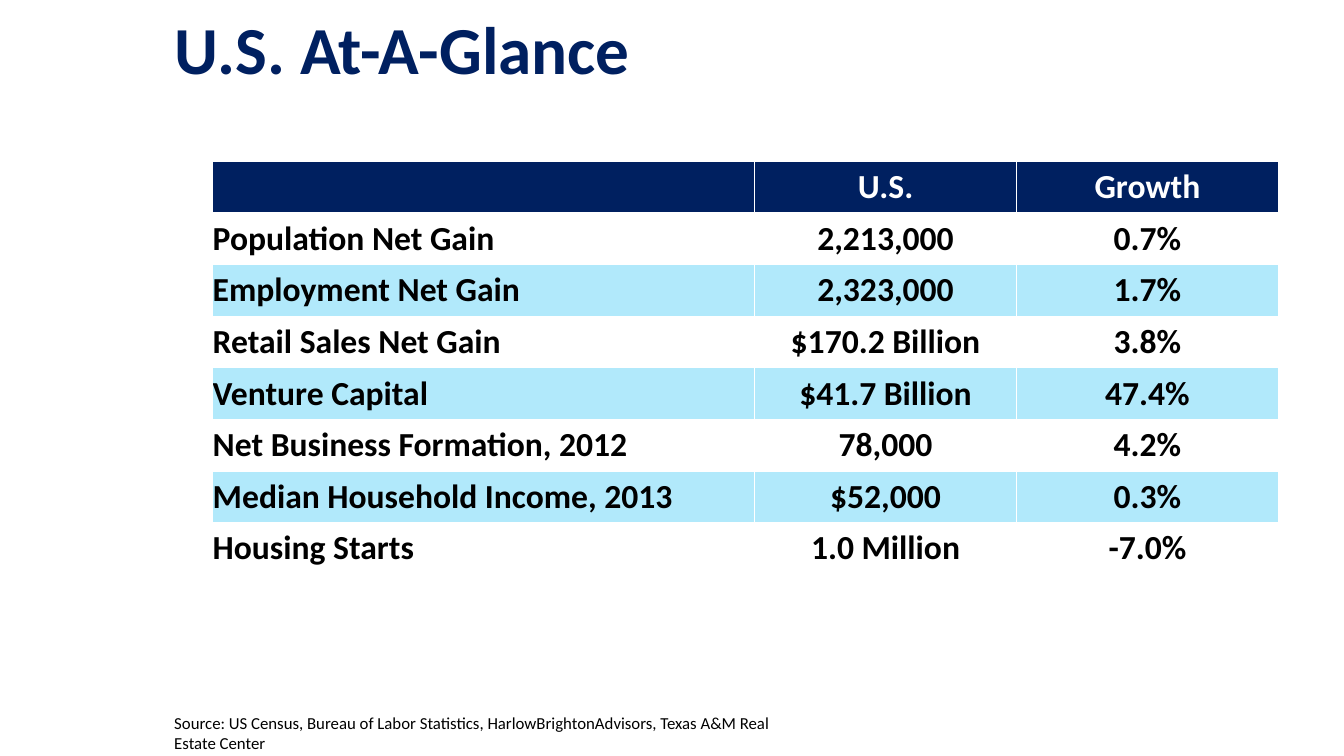
from pptx import Presentation
from pptx.dml.color import RGBColor
from pptx.enum.text import MSO_ANCHOR, PP_ALIGN
from pptx.util import Inches, Pt

LEFT = PP_ALIGN.LEFT
CENTER = PP_ALIGN.CENTER
MIDDLE = MSO_ANCHOR.MIDDLE
TITLE_ONLY = 5

NAVY = "002060"
WHITE = "FFFFFF"
BLACK = "000000"
LIGHT_BLUE = "B1E9FB"

TITLE_FORMAT = {"name": "Calibri", "size": Pt(48), "bold": True}
TABLE_FORMAT = {"name": "Calibri", "size": Pt(24), "bold": True}
SOURCE_FORMAT = {"name": "Calibri", "size": Pt(12), "bold": False}

COLUMN_WIDTHS = [5.38, 2.6, 2.6]
INDICATORS = [
    ("", "U.S.", "Growth"),
    ("Population Net Gain", "2,213,000", "0.7%"),
    ("Employment Net Gain", "2,323,000", "1.7%"),
    ("Retail Sales Net Gain", "$170.2 Billion", "3.8%"),
    ("Venture Capital", "$41.7 Billion", "47.4%"),
    ("Net Business Formation, 2012", "78,000", "4.2%"),
    ("Median Household Income, 2013", "$52,000", "0.3%"),
    ("Housing Starts", "1.0 Million", "-7.0%"),
]
SOURCE = (
    "Source: US Census, Bureau of Labor Statistics, HarlowBrightonAdvisors, "
    "Texas A&M Real Estate Center"
)


def color(value):
    return RGBColor.from_string(value)


def write_text(text_frame, text, text_format, text_color, alignment=LEFT):
    text_frame.text = text
    paragraph = text_frame.paragraphs[0]
    paragraph.alignment = alignment
    for name, value in text_format.items():
        setattr(paragraph.font, name, value)
    paragraph.font.color.rgb = color(text_color)
    return paragraph


def place_title(slide, left, top, width, height):
    title = slide.shapes.title
    title.left, title.top = Inches(left), Inches(top)
    title.width, title.height = Inches(width), Inches(height)
    title.text_frame.vertical_anchor = MIDDLE
    paragraph = write_text(title.text_frame, "U.S. At-A-Glance", TITLE_FORMAT, NAVY)
    paragraph.line_spacing = 0.9


def format_cell(cell, text, row_index, column_index):
    is_header = row_index == 0
    cell.vertical_anchor = MIDDLE
    cell.fill.solid()
    if is_header:
        cell.fill.fore_color.rgb = color(NAVY)
    else:
        cell.fill.fore_color.rgb = color(WHITE if row_index % 2 else LIGHT_BLUE)
        for side in ("left", "top", "right", "bottom"):
            setattr(cell, f"margin_{side}", 0)
    write_text(
        cell.text_frame,
        text,
        TABLE_FORMAT,
        WHITE if is_header else BLACK,
        CENTER if column_index else LEFT,
    )


def place_indicator_table(slide, left, top, width, height):
    table = slide.shapes.add_table(
        len(INDICATORS), len(COLUMN_WIDTHS),
        Inches(left), Inches(top), Inches(width), Inches(height),
    ).table
    for column, share in zip(table.columns, COLUMN_WIDTHS):
        column.width = Inches(width * share / sum(COLUMN_WIDTHS))
    for row_index, values in enumerate(INDICATORS):
        for column_index, text in enumerate(values):
            format_cell(table.cell(row_index, column_index), text, row_index, column_index)


def place_source(slide, left, top, width, height):
    shape = slide.shapes.add_textbox(
        Inches(left), Inches(top), Inches(width), Inches(height)
    )
    shape.text_frame.word_wrap = True
    write_text(shape.text_frame, SOURCE, SOURCE_FORMAT, BLACK)


def main():
    presentation = Presentation()
    presentation.slide_width = Inches(13.33)
    presentation.slide_height = Inches(7.5)
    slide = presentation.slides.add_slide(presentation.slide_layouts[TITLE_ONLY])
    place_title(slide, 1.63, 0, 11.7, 1.05)
    place_indicator_table(slide, 2.11, 1.6, 10.57, 4.1)
    place_source(slide, 1.63, 7.02, 6.37, 0.71)
    presentation.save("out.pptx")


if __name__ == "__main__":
    main()
